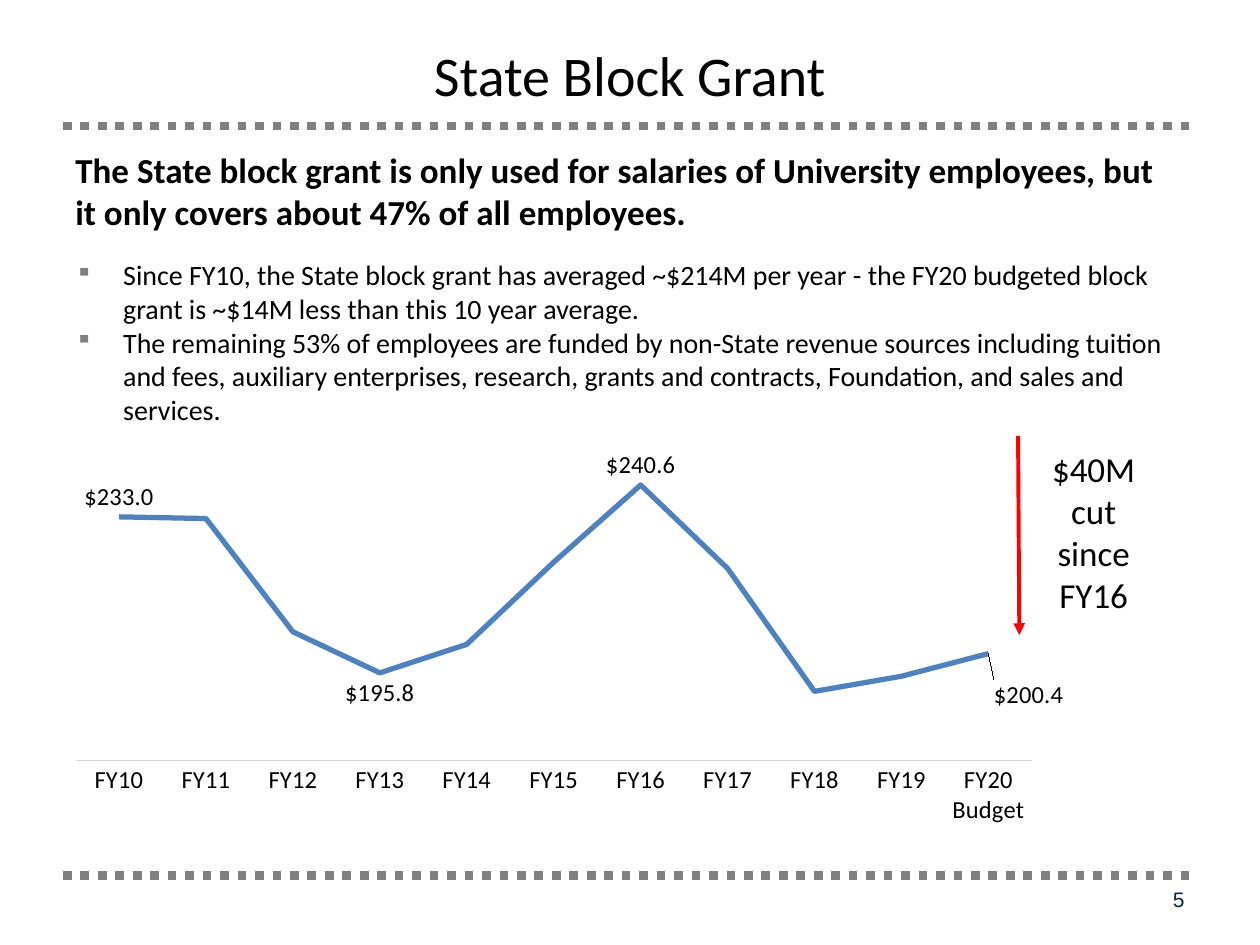
from lxml.etree import SubElement
from pptx import Presentation
from pptx.chart.data import CategoryChartData
from pptx.dml.color import RGBColor
from pptx.enum.chart import XL_CHART_TYPE, XL_LABEL_POSITION, XL_MARKER_STYLE, XL_TICK_MARK
from pptx.enum.dml import MSO_LINE
from pptx.enum.shapes import MSO_CONNECTOR
from pptx.enum.text import MSO_ANCHOR, PP_ALIGN
from pptx.oxml import parse_xml
from pptx.oxml.ns import nsdecls, qn
from pptx.util import Inches, Pt


def rgb(value):
    return RGBColor.from_string(value)


def set_font(font, size, name="Calibri", color="000000", bold=False):
    font.size, font.name, font.bold = Pt(size), name, bold
    font.color.rgb = rgb(color)


def add_bullet(p, char="▪", color="808080", percent=85, indent=0.38):
    pPr = p._p.get_or_add_pPr()
    pPr.set("marL", str(Inches(indent)))
    pPr.set("indent", str(Inches(-indent)))
    SubElement(SubElement(pPr, qn("a:buClr")), qn("a:srgbClr")).set("val", color)
    SubElement(pPr, qn("a:buSzPct")).set("val", str(percent * 1000))
    SubElement(pPr, qn("a:buChar")).set("char", char)


def write(p, text, size, align=PP_ALIGN.LEFT, before=0, bullet=False, **font):
    p.alignment = align
    if before:
        p.space_before = Pt(before)
    if bullet:
        add_bullet(p)
    r = p.add_run()
    r.text = text
    set_font(r.font, size, **font)


class SlideBuilder:
    """Hold the style and current slide, and add elements to it."""

    gray, red, blue, navy = "808080", "FF0000", "4F81BD", "0F243E"
    money = '"$"#,##0.0'

    def __init__(self, prs):
        self.s = prs.slides.add_slide(prs.slide_layouts[5])

    def title(self, text, box):
        sp = self.s.shapes.title
        sp.left, sp.top, sp.width, sp.height = map(Inches, box)
        sp.text_frame.vertical_anchor = MSO_ANCHOR.MIDDLE
        write(sp.text_frame.paragraphs[0], text, 32, align=PP_ALIGN.CENTER)

    def text(self, box, *paragraphs):
        tf = self.s.shapes.add_textbox(*map(Inches, box)).text_frame
        tf.word_wrap = True
        for i, (text, options) in enumerate(paragraphs):
            p = tf.add_paragraph() if i else tf.paragraphs[0]
            write(p, text, **options)

    def line(self, start, end, color, width, dash=None, arrow=False):
        sp = self.s.shapes.add_connector(
            MSO_CONNECTOR.STRAIGHT, *map(Inches, start + end))
        sp.line.color.rgb, sp.line.width = rgb(color), Pt(width)
        if dash:
            sp.line.dash_style = dash
        spPr = sp._element.spPr
        if arrow:
            SubElement(spPr.find(qn("a:ln")), qn("a:tailEnd")).set("type", "triangle")
        SubElement(spPr, qn("a:effectLst"))

    def layout(self, x, y, size=None):
        parts = [("xMode", "edge"), ("yMode", "edge")] if size else []
        parts += [("x", x), ("y", y)]
        if size:
            parts = [("layoutTarget", "inner")] + parts + [("w", size[0]), ("h", size[1])]
        body = "".join(f'<c:{tag} val="{val}"/>' for tag, val in parts)
        return parse_xml(f'<c:layout {nsdecls("c")}><c:manualLayout>{body}'
                         "</c:manualLayout></c:layout>")

    def line_chart(self, box, cats, vals, labels, plot, limits):
        data = CategoryChartData(number_format=self.money)
        data.categories = cats
        data.add_series("Series 1", vals)
        chart = self.s.shapes.add_chart(
            XL_CHART_TYPE.LINE, *map(Inches, box), data).chart
        chart.has_legend = chart.has_title = False
        set_font(chart.font, 10, name="Cabin")

        area = chart._chartSpace.chart.plotArea
        for old in area.findall(qn("c:layout")):
            area.remove(old)
        area.insert(0, self.layout(*plot))

        axis = chart.category_axis
        axis.major_tick_mark = axis.minor_tick_mark = XL_TICK_MARK.NONE
        axis.format.line.color.rgb, axis.format.line.width = rgb("D9D9D9"), Pt(0.75)
        set_font(axis.tick_labels.font, 14)
        axis = chart.value_axis
        axis.visible = axis.has_major_gridlines = False
        axis.minimum_scale, axis.maximum_scale = limits

        chart.plots[0].vary_by_categories = False
        ser = chart.plots[0].series[0]
        ser.smooth, ser.marker.style = False, XL_MARKER_STYLE.NONE
        ser.format.line.color.rgb, ser.format.line.width = rgb(self.blue), Pt(3)
        ser.data_labels.show_value = False
        ser.data_labels.number_format = self.money
        ser.data_labels.number_format_is_linked = False
        set_font(ser.data_labels.font, 14)
        for i, (position, offset) in labels.items():
            label = ser.points[i].data_label
            set_font(label.font, 14)
            label.position = position
            if offset:
                dLbl = next(d for d in ser._element.iter(qn("c:dLbl"))
                            if d.find(qn("c:idx")).get("val") == str(i))
                dLbl.insert(1, self.layout(*offset))


def main():
    prs = Presentation()
    prs.slide_width, prs.slide_height = Inches(10), Inches(7.5)
    b = SlideBuilder(prs)
    for y in (6.95, 1):
        b.line((0.5, y), (9.5, y), b.gray, 5, dash=MSO_LINE.ROUND_DOT)
    b.title("State Block Grant", (0.5, 0.17, 9, 0.83))
    b.text(
        (0.5, 1.13, 8.83, 2.93),
        ("The State block grant is only used for salaries of University employees, "
         "but it only covers about 47% of all employees.", dict(size=20, bold=True)),
        ("Since FY10, the State block grant has averaged ~$214M per year - the FY20 "
         "budgeted block grant is ~$14M less than this 10 year average.",
         dict(size=16, before=14.5, bullet=True)),
        ("The remaining 53% of employees are funded by non-State revenue sources "
         "including tuition and fees, auxiliary enterprises, research, grants and "
         "contracts, Foundation, and sales and services.", dict(size=16, bullet=True)))
    above, below = XL_LABEL_POSITION.ABOVE, XL_LABEL_POSITION.BELOW
    b.line_chart(
        (0.44, 3.37, 8, 3.33),
        [f"FY{year}" for year in range(10, 20)] + ["FY20 Budget"],
        (233, 232.6, 205.6, 195.8, 202.6, 222.2, 240.6, 220.7, 191.4, 195, 200.4),
        labels={0: (above, None), 3: (below, None), 6: (above, None),
                10: (below, (0.04, 0.05))},
        plot=(0.02, 0.1, (0.95, 0.7)), limits=(175, 245))
    b.line((8.08, 3.46), (8.09, 5.04), b.red, 2.25, arrow=True)
    b.text((8.14, 3.5, 1.08, 1.45),
           ("$40M cut since FY16", dict(size=20, align=PP_ALIGN.CENTER)))
    b.text((7.33, 6.99, 2.17, 0.4),
           ("5", dict(size=12, align=PP_ALIGN.RIGHT, name="Arial", color=b.navy)))
    prs.save("out.pptx")


if __name__ == "__main__":
    main()
